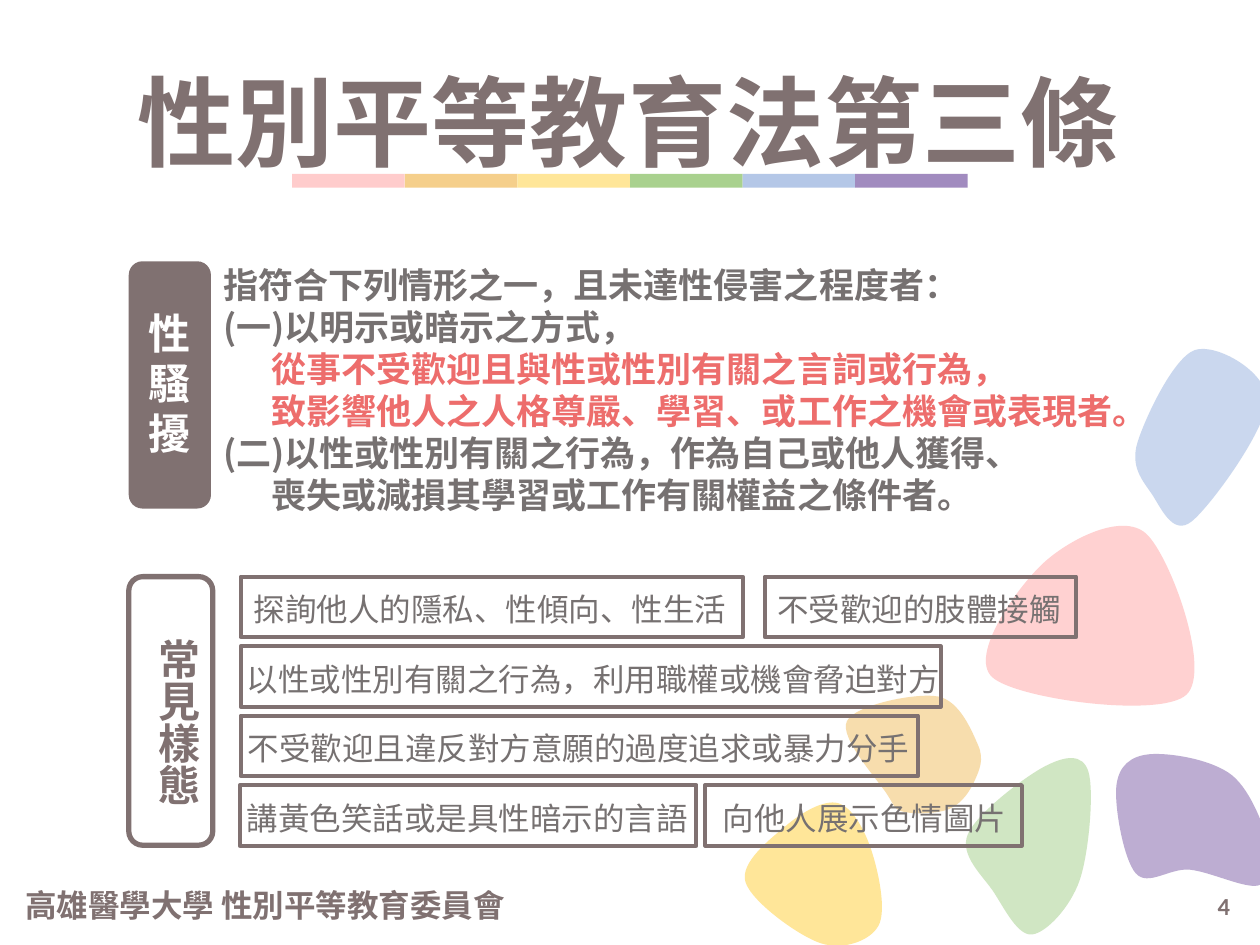
from lxml import etree
from pptx import Presentation
from pptx.dml.color import RGBColor
from pptx.enum.shapes import MSO_SHAPE
from pptx.enum.text import MSO_ANCHOR, PP_ALIGN
from pptx.oxml.ns import qn
from pptx.util import Pt

RECT, ROUND = MSO_SHAPE.RECTANGLE, MSO_SHAPE.ROUNDED_RECTANGLE
LEFT, CENTER, RIGHT = PP_ALIGN.LEFT, PP_ALIGN.CENTER, PP_ALIGN.RIGHT
MIDDLE = MSO_ANCHOR.MIDDLE
SC, TC = "Noto Sans CJK SC", "Noto Sans CJK TC"
COLORS = {
    "brown": "807171", "gray": "767171", "coral": "ED6D6C", "white": "FFFFFF",
    "pink": "FFCCCC", "orange": "F5CF8B", "yellow": "FFE699", "green": "A9D18E",
    "pale green": "C5E0B4", "blue": "B4C7E7", "purple": "A18BBF",
}
RGB = {name: RGBColor.from_string(value) for name, value in COLORS.items()}

prs = Presentation()
prs.slide_width, prs.slide_height = Pt(720), Pt(540)
s = prs.slides.add_slide(prs.slide_layouts[6])


def add_text(box, lines, size, color, bold=True, font=SC, align=LEFT, wrap=False):
    """Add a text box; each line is (text, color or None, left indent)."""
    sp = s.shapes.add_textbox(*[Pt(v) for v in box])
    tf = sp.text_frame
    tf.word_wrap = wrap
    for i, (text, own_color, indent) in enumerate(lines):
        p = tf.paragraphs[0] if i == 0 else tf.add_paragraph()
        p.alignment = align
        p.line_spacing = Pt(size * 1.2)
        if indent:
            p._p.get_or_add_pPr().set("marL", str(Pt(indent)))
        r = p.add_run()
        r.text = text
        r.font.size, r.font.bold, r.font.name = Pt(size), bold, font
        r.font.color.rgb = RGB[own_color or color]
        etree.SubElement(r._r.rPr, qn("a:ea")).set("typeface", font)
    return sp


def add_box(kind, box, fill=None, line=None, shapes=s.shapes):
    sp = shapes.add_shape(kind, *[Pt(v) for v in box])
    sp.shadow.inherit = False
    if fill:
        sp.fill.solid()
        sp.fill.fore_color.rgb = RGB[fill]
    else:
        sp.fill.background()
    if line:
        sp.line.color.rgb, sp.line.width = RGB["brown"], Pt(line)
    else:
        sp.line.fill.background()


# Petals: color, opacity %, and the points a smooth closed curve runs through
petals = [
    ("pink", 89, [(596, 322), (655, 305), (678, 397), (567, 387)]),
    ("blue", 70, [(658, 282), (650, 253), (683, 200), (724, 229), (681, 298)]),
    ("purple", 70, [(638, 449), (657, 431), (704, 443), (726, 486), (719, 506),
                    (680, 497), (649, 499)]),
    ("yellow", 100, [(426, 504), (449, 472), (479, 459), (498, 486), (502, 529), (469, 539)]),
    ("pale green", 80, [(568, 510), (553, 477), (597, 438), (622, 441), (617, 503), (590, 534)]),
    ("orange", 70, [(507, 454), (484, 412), (536, 398), (559, 426), (557, 446),
                    (543, 462), (517, 464)]),
]
for color, opacity, points in petals:
    # Catmull-Rom rule: each tangent is parallel to the line between the neighbours
    curves, outline = [], []
    for i, start in enumerate(points):
        before, end, after = points[i - 1], points[(i + 1) % len(points)], points[(i + 2) % len(points)]
        out = [a + (c - b) / 6 for a, b, c in zip(start, before, end)]
        into = [a - (c - b) / 6 for a, b, c in zip(end, start, after)]
        curves.append((out, into, end))
        for t in [k / 8 for k in range(8)]:
            u = 1 - t
            outline.append([Pt(u**3 * a + 3 * u * u * t * b + 3 * u * t * t * c + t**3 * d)
                            for a, b, c, d in zip(start, out, into, end)])

    fb = s.shapes.build_freeform(*outline[0])
    fb.add_line_segments(outline[1:])
    sp = fb.convert_to_shape()
    sp.shadow.inherit = False
    sp.line.fill.background()
    sp.fill.solid()
    sp.fill.fore_color.rgb = RGB[color]
    if opacity < 100:
        srgb = sp._element.spPr.find(".//" + qn("a:srgbClr"))
        etree.SubElement(srgb, qn("a:alpha")).set("val", str(opacity * 1000))

    # Swap the line segments for true curves
    path = sp._element.spPr.find(".//" + qn("a:path"))
    for child in list(path):
        path.remove(child)
    for tag, stops in [("a:moveTo", points[:1])] + [("a:cubicBezTo", c) for c in curves]:
        segment = etree.SubElement(path, qn(tag))
        for x, y in stops:
            pt = etree.SubElement(segment, qn("a:pt"))
            pt.set("x", str(Pt(x) - sp.left))
            pt.set("y", str(Pt(y) - sp.top))
    etree.SubElement(path, qn("a:close"))

# Title and rainbow rule
add_text((69, 31.7, 580, 75), [("性別平等教育法第三條", None, 0)], 56, "brown", align=CENTER)
rainbow = s.shapes.add_group_shape()
for i, color in enumerate(["pink", "orange", "yellow", "green", "blue", "purple"]):
    add_box(RECT, (167 + i * 64.33, 99.4, 64.33, 7.8), color, shapes=rainbow.shapes)

# Definition
INDENT = 27.5
add_text((120.4, 146.9, 580, 218), [
    ("指符合下列情形之一，且未達性侵害之程度者：", None, 0),
    ("(一)以明示或暗示之方式，", None, 0),
    ("從事不受歡迎且與性或性別有關之言詞或行為，", "coral", INDENT),
    ("致影響他人之人格尊嚴、學習、或工作之機會或表現者。", "coral", INDENT),
    ("(二)以性或性別有關之行為，作為自己或他人獲得、", None, 0),
    ("喪失或減損其學習或工作有關權益之條件者。", None, INDENT),
], 20, "gray", wrap=True)
add_box(ROUND, (73.6, 149.3, 47, 141.3), "brown")
add_text((77.7, 172, 39, 94.5), [(c, None, 0) for c in "性騷擾"], 24, "white")

# Footer
sp = add_text((429, 503.3, 281, 28.8), [("4", None, 0)], 14, "brown",
              font="Calibri", align=RIGHT, wrap=True)
sp.text_frame.vertical_anchor = MIDDLE
add_text((7.2, 502.6, 292, 29), [("高雄醫學大學 性別平等教育委員會", None, 0)], 18, "brown")

# Common forms
add_box(ROUND, (73.6, 329.5, 48, 153.5), line=3)
sp = add_text((75.6, 358, 44, 104.4), [("常見樣態", None, 0)], 24, "brown")
sp.text_frame._txBody.bodyPr.set("vert", "eaVert")

# Text, row, frame left, frame width, text left
examples = [
    ("探詢他人的隱私、性傾向、性生活", 0, 137.5, 287, 138),
    ("不受歡迎的肢體接觸", 0, 437, 178, 437),
    ("以性或性別有關之行為，利用職權或機會脅迫對方", 1, 137.5, 400, 134),
    ("不受歡迎且違反對方意願的過度追求或暴力分手", 2, 137.5, 387, 134.5),
    ("講黃色笑話或是具性暗示的言語", 3, 137, 261, 134),
    ("向他人展示色情圖片", 3, 403, 181, 406),
]
for text, row, left, width, text_left in examples:
    top = 329.5 + row * 39.7
    add_text((text_left, top + 4.3, 18 * len(text) + 17, 29), [(text, None, 0)],
             18, "gray", bold=False, font=TC)
    add_box(RECT, (left, top, width, 34.6), line=2.25)

prs.save("out.pptx")
